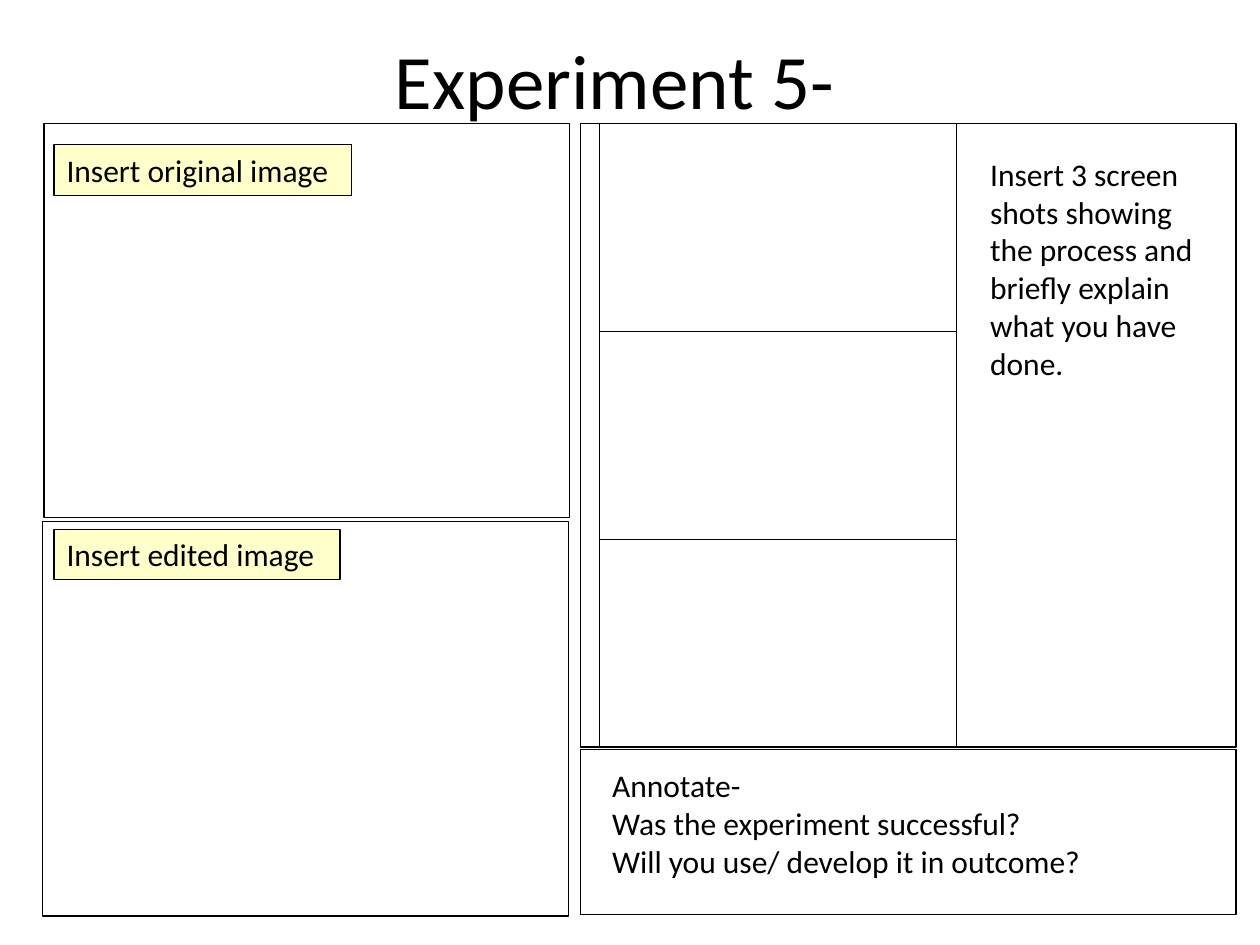
from lxml import etree
from pptx import Presentation
from pptx import util as u
from pptx.dml.color import RGBColor
from pptx.enum import shapes, text
from pptx.oxml.ns import qn


def colour(value):
    return RGBColor.from_string(value)


class Worksheet:
    FONT, INK, PAPER, LABEL = "Calibri", "000000", "FFFFFF", "FFFFCC"
    COLUMNS, ROWS = 100, 75

    def __init__(self, deck):
        self.column = deck.slide_width / self.COLUMNS
        self.row = deck.slide_height / self.ROWS
        self.page = deck.slides.add_slide(deck.slide_layouts[5])

    def place(self, left, top, width, height):
        return [round(size) for size in (left * self.column, top * self.row,
                                         width * self.column, height * self.row)]

    def set_text(self, frame, lines, size, align):
        frame.word_wrap = True
        frame.text = "\n".join(lines)
        for paragraph in frame.paragraphs:
            paragraph.alignment = align
            paragraph.font.name = self.FONT
            paragraph.font.size = u.Pt(size)
            paragraph.font.color.rgb = colour(self.INK)

    def title(self, area, words):
        title = self.page.shapes.title
        title.left, title.top, title.width, title.height = self.place(*area)
        self.set_text(title.text_frame, [words], 44, text.PP_ALIGN.CENTER)
        title.text_frame.vertical_anchor = text.MSO_ANCHOR.MIDDLE

    def panel(self, area, fill=None):
        box = self.page.shapes.add_shape(shapes.MSO_SHAPE.RECTANGLE, *self.place(*area))
        box.shadow.inherit = False
        if fill:
            box.fill.solid()
            box.fill.fore_color.rgb = colour(fill)
        else:
            box.fill.background()
        box.line.color.rgb = colour(self.INK)
        box.line.width = u.Pt(0.75)
        return box

    def body(self, box, lines):
        frame = box.text_frame
        self.set_text(frame, lines, 18, text.PP_ALIGN.LEFT)
        frame.vertical_anchor = text.MSO_ANCHOR.TOP
        frame.auto_size = text.MSO_AUTO_SIZE.SHAPE_TO_FIT_TEXT

    def label(self, area, words):
        self.body(self.panel(area, self.LABEL), [words])

    def note(self, area, *lines):
        self.body(self.page.shapes.add_textbox(*self.place(*area)), lines)

    def border(self, cell):
        properties = cell._tc.get_or_add_tcPr()
        for position, side in enumerate(("lnL", "lnR", "lnT", "lnB")):
            line = etree.Element(qn(f"a:{side}"), w=str(u.Pt(1)))
            fill = etree.SubElement(line, qn("a:solidFill"))
            etree.SubElement(fill, qn("a:srgbClr"), val=self.INK)
            properties.insert(position, line)

    def frames(self, area, count):
        table = self.page.shapes.add_table(count, 1, *self.place(*area)).table
        table.first_row = table.horz_banding = False
        for cell in table.iter_cells():
            cell.fill.solid()
            cell.fill.fore_color.rgb = colour(self.PAPER)
            self.border(cell)


def main():
    deck = Presentation()
    deck.slide_width, deck.slide_height = u.Inches(10), u.Inches(7.5)
    sheet = Worksheet(deck)

    sheet.title((3.8, 0, 90, 12.5), "Experiment 5-")

    original_image = (3.5, 9.8, 41.7, 31.3)
    edited_image = (3.4, 41.4, 41.7, 31.3)
    process = (46.1, 9.8, 52, 49.5)
    annotation = (46.1, 59.5, 52, 13.1)
    for area in (original_image, edited_image, process, annotation):
        sheet.panel(area)

    sheet.label((4.3, 11.5, 23.6, 4), "Insert original image")
    sheet.label((4.3, 42, 22.7, 4), "Insert edited image")
    sheet.note((77.6, 11.8, 18.9, 19.2),
               "Insert 3 screen shots showing the process and briefly explain what you have done.")
    sheet.note((47.6, 60.3, 53.5, 10.1),
               "Annotate-",
               "Was the experiment successful?",
               "Will you use/ develop it in outcome?")
    sheet.frames((47.6, 9.8, 28.3, 49.5), 3)

    deck.save("out.pptx")


if __name__ == "__main__":
    main()
